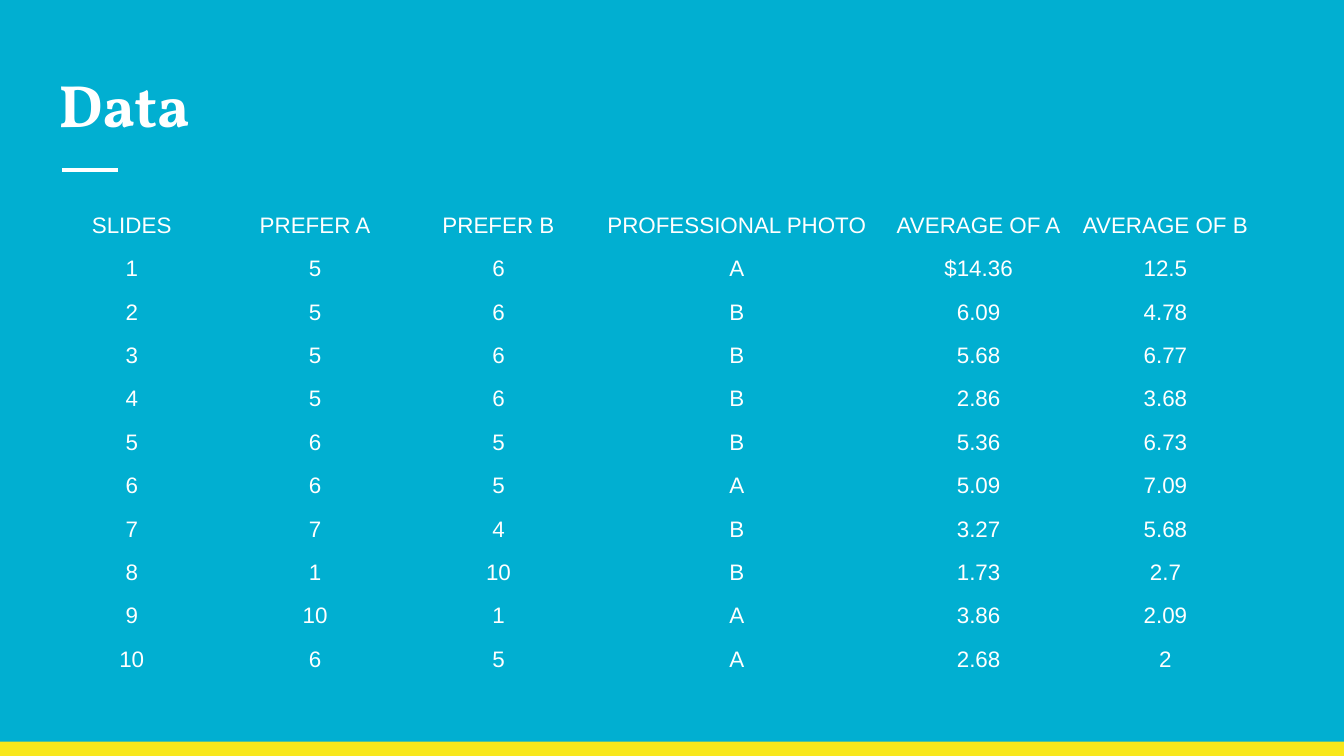
"""Build a slide with a table of slide preferences and averages."""
from pptx import Presentation
from pptx import util as u
from pptx.dml.color import RGBColor
from pptx.enum import shapes, text
from pptx.oxml.ns import qn
from lxml import etree

SKY = RGBColor(0x01, 0xAF, 0xD1)
YELLOW = RGBColor(0xF8, 0xE7, 0x1C)
WHITE = RGBColor(0xFF, 0xFF, 0xFF)

NO_STYLE_NO_GRID = "{2D5ABB26-0587-4C30-8999-92F81FD0307C}"
COLUMN_WIDTHS = (3.4, 3.53, 3.4, 5.61, 3.53, 3.53)
HEADER_HEIGHT, ROW_HEIGHT = 1.5, 0.82
RESULTS = (
    ("SLIDES", "PREFER A", "PREFER B", "PROFESSIONAL PHOTO", "AVERAGE OF A", "AVERAGE OF B"),
    ("1", "5", "6", "A", "$14.36", "12.5"),
    ("2", "5", "6", "B", "6.09", "4.78"),
    ("3", "5", "6", "B", "5.68", "6.77"),
    ("4", "5", "6", "B", "2.86", "3.68"),
    ("5", "6", "5", "B", "5.36", "6.73"),
    ("6", "6", "5", "A", "5.09", "7.09"),
    ("7", "7", "4", "B", "3.27", "5.68"),
    ("8", "1", "10", "B", "1.73", "2.7"),
    ("9", "10", "1", "A", "3.86", "2.09"),
    ("10", "6", "5", "A", "2.68", "2"),
)


def set_font(paragraph, name, size, bold=False):
    font = paragraph.font
    font.name, font.size, font.bold = name, u.Pt(size), bold
    font.color.rgb = WHITE


def add_footer_band(slide):
    band = slide.shapes.add_shape(
        shapes.MSO_SHAPE.RECTANGLE, 0, u.Cm(14.02), u.Cm(25.4), u.Cm(0.27))
    band.shadow.inherit = False
    band.fill.solid()
    band.fill.fore_color.rgb = YELLOW
    band.line.fill.background()


def add_title_rule(slide):
    rule = slide.shapes.add_connector(
        shapes.MSO_CONNECTOR.STRAIGHT, u.Cm(1.17), u.Cm(3.21), u.Cm(2.23), u.Cm(3.21))
    rule.line.color.rgb = WHITE
    rule.line.width = u.Pt(2.25)
    etree.SubElement(rule._element.spPr, qn("a:effectLst"))


def add_title(slide, wording):
    title = slide.shapes.add_textbox(u.Cm(0.86), u.Cm(1.04), u.Cm(23.67), u.Cm(1.8))
    frame = title.text_frame
    frame.word_wrap = True
    frame.margin_left = frame.margin_right = u.Cm(0.25)
    frame.margin_top = frame.margin_bottom = u.Cm(0.25)
    frame.text = wording
    set_font(frame.paragraphs[0], "Vollkorn", 32, bold=True)


def fill_cell(cell, value):
    cell.fill.background()
    cell.vertical_anchor = text.MSO_ANCHOR.BOTTOM
    cell.margin_left = cell.margin_right = u.Cm(0.08)
    cell.margin_top = cell.margin_bottom = u.Cm(0.05)
    cell.text = value
    paragraph = cell.text_frame.paragraphs[0]
    paragraph.alignment = text.PP_ALIGN.CENTER
    paragraph.line_spacing = 1.15
    set_font(paragraph, "Arial", 12)


def add_results_table(slide, results):
    row_heights = [HEADER_HEIGHT] + [ROW_HEIGHT] * (len(results) - 1)
    frame = slide.shapes.add_table(
        len(results), len(COLUMN_WIDTHS), u.Cm(0.79), u.Cm(3.05),
        u.Cm(sum(COLUMN_WIDTHS)), u.Cm(sum(row_heights)))
    table = frame.table
    table.first_row = table.horz_banding = False
    next(frame._element.iter(qn("a:tableStyleId"))).text = NO_STYLE_NO_GRID
    for column, width in zip(table.columns, COLUMN_WIDTHS):
        column.width = u.Cm(width)
    for row, height, values in zip(table.rows, row_heights, results):
        row.height = u.Cm(height)
        for cell, value in zip(row.cells, values):
            fill_cell(cell, value)


def main():
    deck = Presentation()
    deck.slide_width, deck.slide_height = u.Cm(25.4), u.Cm(14.29)
    slide = deck.slides.add_slide(deck.slide_layouts[6])
    slide.background.fill.solid()
    slide.background.fill.fore_color.rgb = SKY
    add_footer_band(slide)
    add_title_rule(slide)
    add_title(slide, "Data")
    add_results_table(slide, RESULTS)
    deck.save("out.pptx")


if __name__ == "__main__":
    main()
